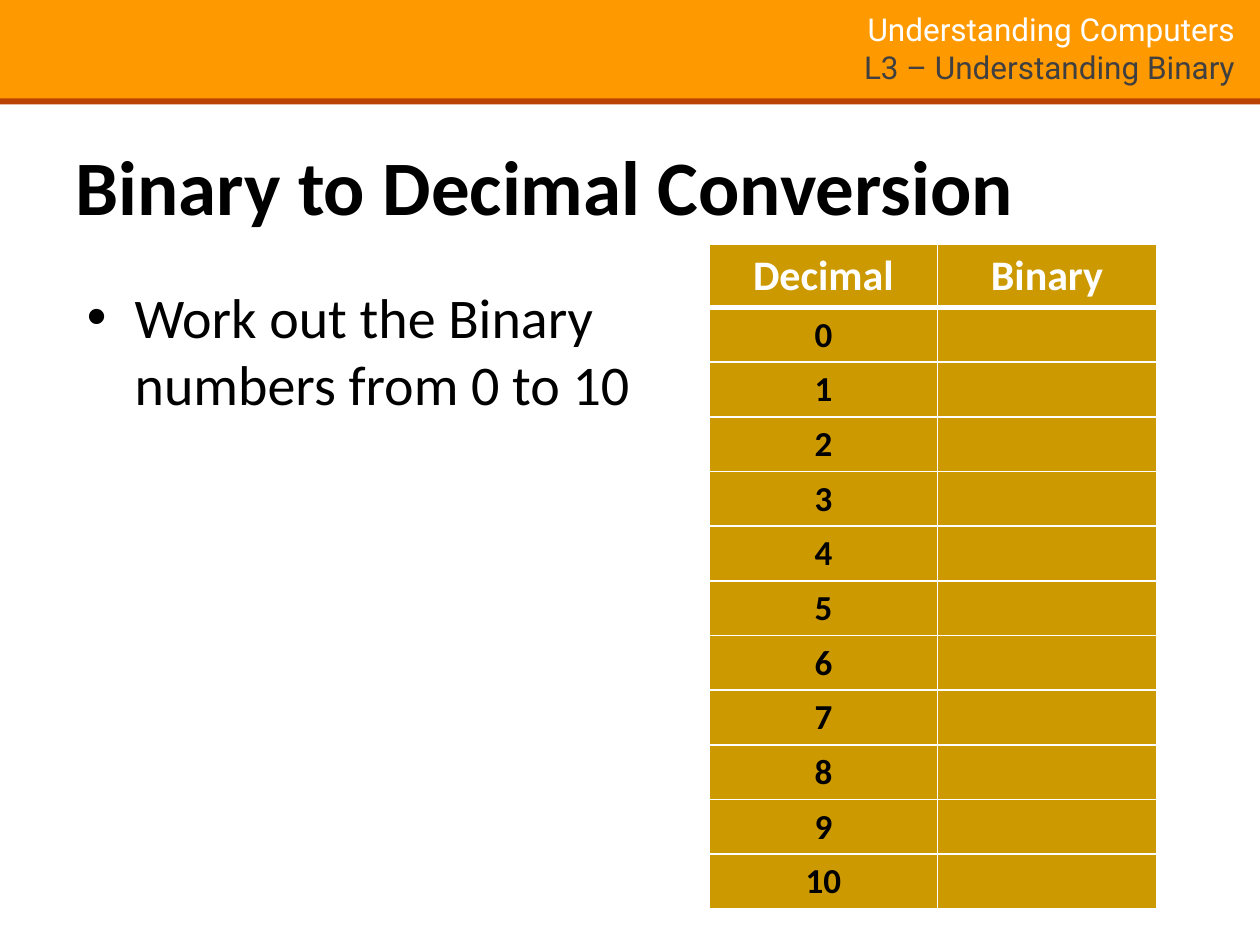
import pptx
import pptx.util
import pptx.dml.color
import pptx.enum.shapes
import pptx.enum.text
from lxml import etree
from pptx.oxml.ns import qn
from pptx.util import Inches

COLOURS = {
    "band": "FF9900",
    "rule": "BB4301",
    "gold": "CC9900",
    "white": "FFFFFF",
    "grey": "404040",
    "black": "000000",
}
ALIGN = pptx.enum.text.PP_ALIGN


def rgb(name):
    return pptx.dml.color.RGBColor.from_string(COLOURS[name])


def format_run(run, size, colour, font="Calibri", bold=False):
    run.font.size = pptx.util.Pt(size)
    run.font.name = font
    run.font.bold = bold
    run.font.color.rgb = rgb(colour)


def add_bar(slide, top, height, colour):
    bar = slide.shapes.add_shape(
        pptx.enum.shapes.MSO_SHAPE.RECTANGLE,
        Inches(-0.04), Inches(top), Inches(10.06), Inches(height))
    bar.shadow.inherit = False
    bar.fill.solid()
    bar.fill.fore_color.rgb = rgb(colour)
    bar.line.fill.background()


def add_text(slide, left, top, width, height, text):
    """Add a wrapping text box and return its only paragraph."""
    box = slide.shapes.add_textbox(
        Inches(left), Inches(top), Inches(width), Inches(height))
    box.text_frame.word_wrap = True
    paragraph = box.text_frame.paragraphs[0]
    paragraph.text = text
    return paragraph


def add_bullet(paragraph, indent):
    properties = paragraph._p.get_or_add_pPr()
    properties.set("marL", str(Inches(indent)))
    properties.set("indent", str(-Inches(indent)))
    font = etree.SubElement(properties, qn("a:buFont"))
    font.set("typeface", "Arial")
    etree.SubElement(properties, qn("a:buChar")).set("char", "•")


def add_borders(cell, bottom_width):
    widths = {"a:lnL": 1, "a:lnR": 1, "a:lnT": 1, "a:lnB": bottom_width}
    for side, width in widths.items():
        line = etree.SubElement(cell._tc.get_or_add_tcPr(), qn(side))
        line.set("w", str(pptx.util.Pt(width)))
        fill = etree.SubElement(line, qn("a:solidFill"))
        etree.SubElement(fill, qn("a:srgbClr")).set("val", COLOURS["white"])


def add_conversion_table(slide, rows):
    row_height = Inches(0.41)
    table = slide.shapes.add_table(
        len(rows), 2, Inches(5.63), Inches(1.94),
        Inches(3.55), row_height * len(rows)).table
    for column, width in zip(table.columns, (1.81, 1.74)):
        column.width = Inches(width)
    for row_index, values in enumerate(rows):
        is_header = row_index == 0
        table.rows[row_index].height = row_height
        for column_index, value in enumerate(values):
            cell = table.cell(row_index, column_index)
            add_borders(cell, 3 if is_header else 1)
            cell.fill.solid()
            cell.fill.fore_color.rgb = rgb("gold")
            paragraph = cell.text_frame.paragraphs[0]
            paragraph.text = value
            paragraph.alignment = ALIGN.CENTER
            for run in paragraph.runs:
                format_run(run, 24 if is_header else 20,
                           "white" if is_header else "black", bold=True)


def main():
    deck = pptx.Presentation()
    deck.slide_width, deck.slide_height = Inches(10), Inches(7.5)
    slide = deck.slides.add_slide(deck.slide_layouts[6])

    # Header band with course and lesson
    add_bar(slide, 0.77, 0.06, "rule")
    add_bar(slide, -0.01, 0.79, "band")
    heading = add_text(slide, 4.99, 0.03, 4.91, 0.69,
                       "Understanding Computers\vL3 – Understanding Binary")
    heading.alignment = ALIGN.RIGHT
    for run, colour in zip(heading.runs, ("white", "grey")):
        format_run(run, 18, colour, font="Roboto")

    # Title and task
    title = add_text(slide, 0.5, 1.05, 9, 1.25, "Binary to Decimal Conversion")
    format_run(title.runs[0], 44, "black", bold=True)
    task = add_text(slide, 0.59, 2.19, 4.65, 4.56,
                    "Work out the Binary numbers from 0 to 10")
    add_bullet(task, 0.38)
    format_run(task.runs[0], 32, "black")

    # Table with the binary column left to fill in
    add_conversion_table(
        slide, [("Decimal", "Binary")] + [(str(n), "") for n in range(11)])

    deck.save("out.pptx")


if __name__ == "__main__":
    main()
